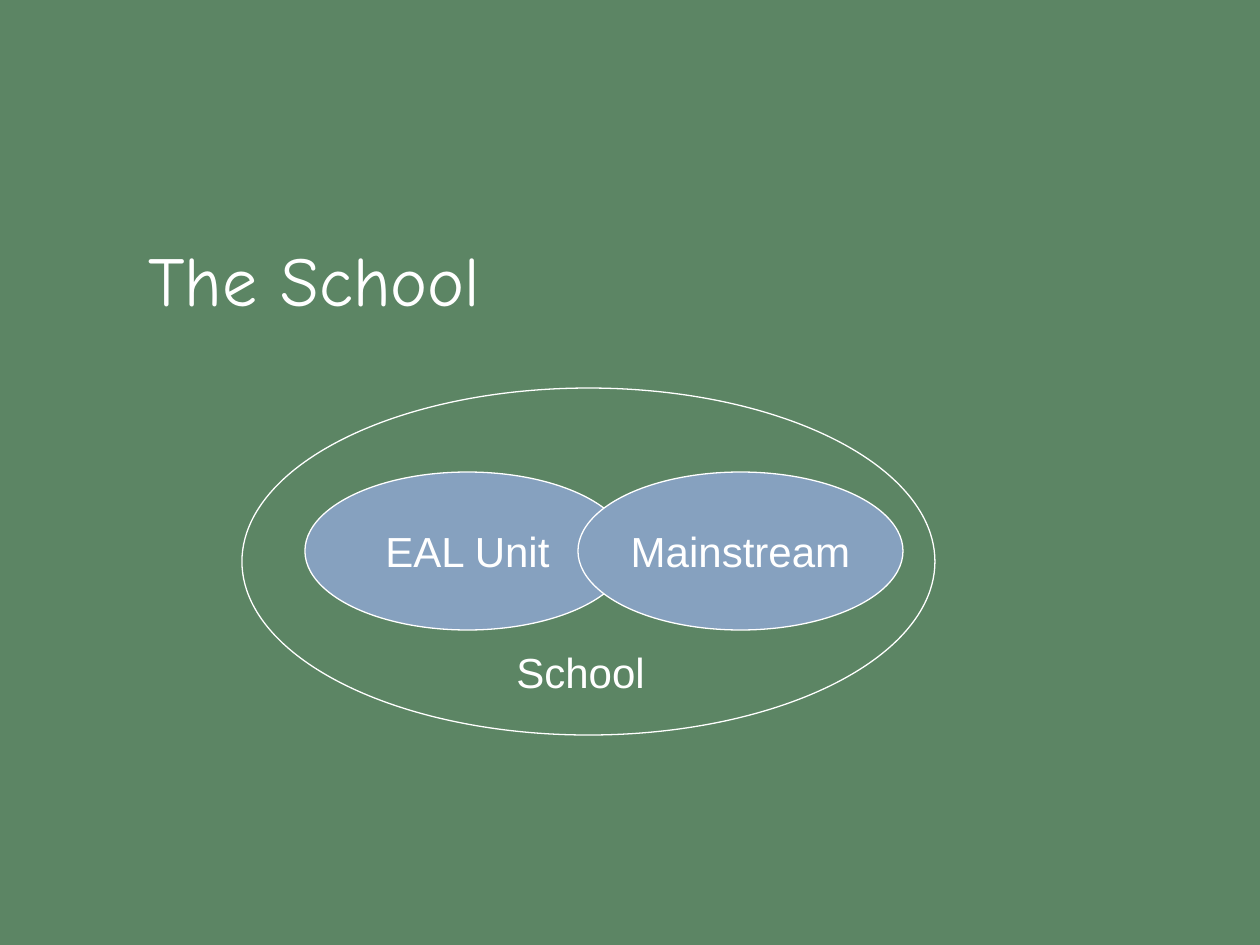
"""Build the school slide: two overlapping ovals inside a larger one."""
from lxml.etree import fromstring
from pptx import Presentation as Deck
from pptx.dml.color import RGBColor as Rgb
from pptx.enum.shapes import MSO_SHAPE as Shape
from pptx.enum.text import MSO_ANCHOR as Anchor, PP_ALIGN as Align
from pptx.oxml.ns import nsdecls
from pptx.util import Emu, Pt

PX = 914400 / 126
HUES = {"back": "5C8564", "oval": "86A1BF", "white": "FFFFFF"}
SHADE = (
    f'<a:effectLst {nsdecls("a")}>'
    '<a:outerShdw blurRad="38100" dist="38100" dir="2700000" algn="tl">'
    '<a:srgbClr val="808080"/></a:outerShdw></a:effectLst>'
)


def scale(*box):
    return [Emu(round(n * PX)) for n in box]


def write(shape, text, size, face, anchor, wrap=False, align=Align.LEFT):
    frame = shape.text_frame
    frame.word_wrap = wrap
    frame.vertical_anchor = anchor
    para = frame.paragraphs[0]
    para.alignment = align
    run = para.add_run()
    run.text = text
    run.font.size = Pt(size)
    run.font.color.rgb = Rgb.from_string(HUES["white"])
    run.font.name = face
    return run


deck = Deck()
deck.slide_width, deck.slide_height = scale(1260, 945)
slide = deck.slides.add_slide(deck.slide_layouts[6])
fill = slide.background.fill
fill.solid()
fill.fore_color.rgb = Rgb.from_string(HUES["back"])

title = slide.shapes.add_textbox(*scale(136, 199, 599, 158))
run = write(title, "The School", 40, "Comic Neue", Anchor.MIDDLE, wrap=True)
run.font.fill._xPr.find("{*}solidFill").addnext(fromstring(SHADE))

ovals = [
    ("EAL Unit", (305, 472, 325, 158)),
    ("Mainstream", (578, 472, 325, 158)),
    ("", (242, 388, 693, 347)),
]
for text, box in ovals:
    oval = slide.shapes.add_shape(Shape.OVAL, *scale(*box))
    oval.shadow.inherit = False
    oval.line.color.rgb = Rgb.from_string(HUES["white"])
    oval.line.width = Pt(0.75)
    if text:
        oval.fill.solid()
        oval.fill.fore_color.rgb = Rgb.from_string(HUES["oval"])
        write(oval, text, 24, "Arial", Anchor.MIDDLE, align=Align.CENTER)
    else:
        oval.fill.background()

label = slide.shapes.add_textbox(*scale(504, 640, 154, 63))
write(label, "School", 24, "Arial", Anchor.TOP)

deck.save("out.pptx")
